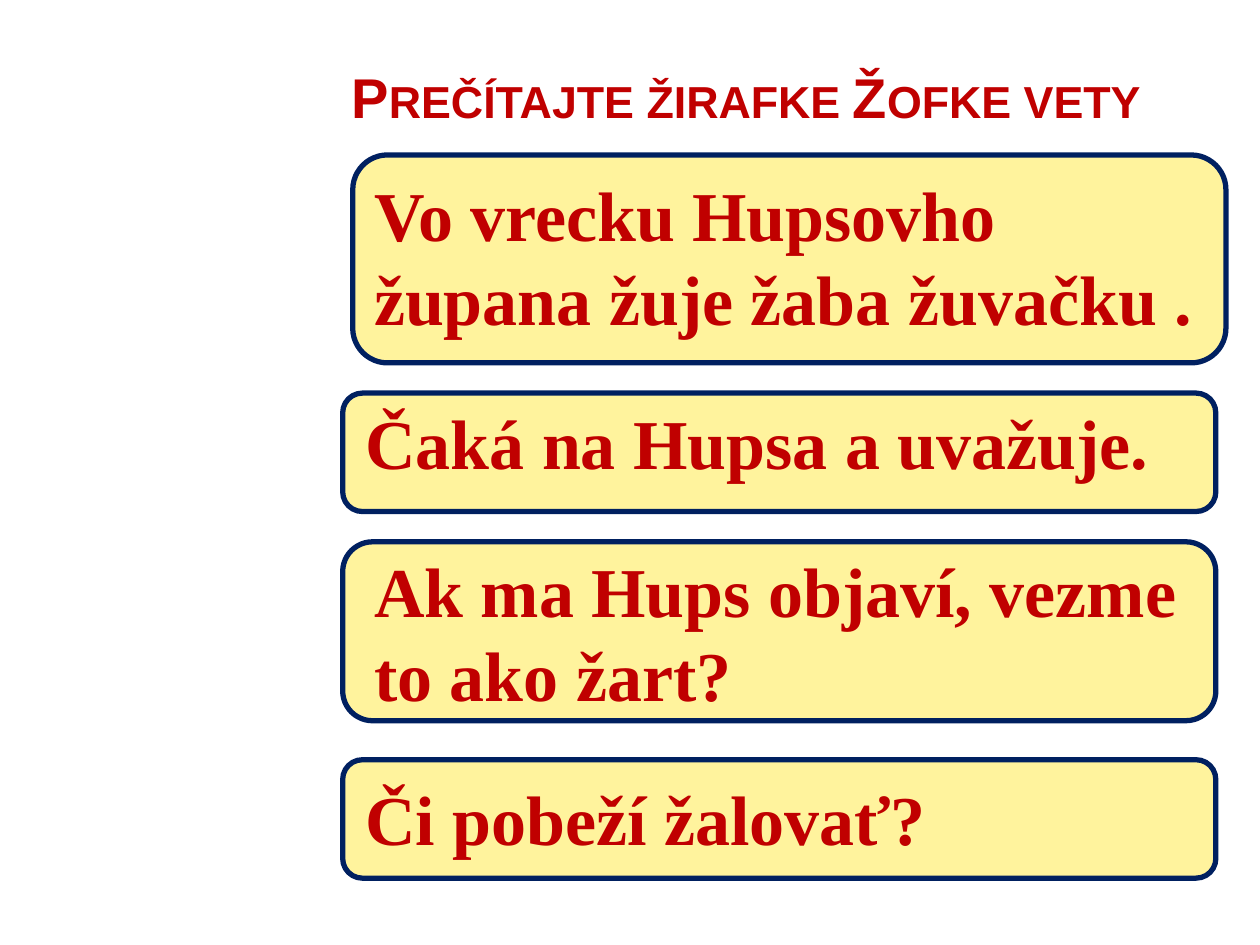
from dataclasses import dataclass

import pptx
import pptx.dml.color
import pptx.enum.shapes
import pptx.enum.text
import pptx.util
from pptx.util import Inches

RED = "C00000"
YELLOW = "FFF39D"
NAVY = "002060"
PANEL_WIDTH = 6.93
SENTENCE_WIDTH = 6.85


@dataclass
class SentenceCard:
    text: str
    panel_left: float
    panel_top: float
    panel_height: float
    text_left: float
    text_top: float
    text_height: float


CARDS = [
    SentenceCard("Vo vrecku Hupsovho župana žuje žaba žuvačku .", 2.8, 1.23, 1.65, 2.87, 1.31, 1.45),
    SentenceCard("Čaká na Hupsa a uvažuje.", 2.72, 3.12, 0.94, 2.8, 3.12, 0.77),
    SentenceCard("Ak ma Hups objaví, vezme to ako žart?", 2.72, 4.3, 1.42, 2.87, 4.3, 1.45),
    SentenceCard("Či pobeží žalovať?", 2.72, 6.03, 0.94, 2.8, 6.11, 0.77),
]


def color(value: str) -> pptx.dml.color.RGBColor:
    return pptx.dml.color.RGBColor.from_string(value)


def write_text(shape, text: str, font_name: str, size: int, line_height: int):
    frame = shape.text_frame
    frame.word_wrap = True
    frame.auto_size = pptx.enum.text.MSO_AUTO_SIZE.NONE
    frame.vertical_anchor = pptx.enum.text.MSO_ANCHOR.TOP
    paragraph = frame.paragraphs[0]
    paragraph.alignment = pptx.enum.text.PP_ALIGN.LEFT
    paragraph.line_spacing = pptx.util.Pt(line_height)
    run = paragraph.add_run()
    run.text = text
    run.font.name = font_name
    run.font.size = pptx.util.Pt(size)
    run.font.bold = True
    run.font.color.rgb = color(RED)
    return run


def draw_title(slide) -> None:
    title = slide.shapes.title
    title.left, title.top = Inches(2.72), Inches(0.44)
    title.width, title.height = Inches(7.01), Inches(1.03)
    title.text_frame.margin_left = Inches(0.07)
    run = write_text(title, "Prečítajte žirafke Žofke vety", "Arial", 32, 39)
    run.font._element.set("cap", "small")


def draw_card(slide, card: SentenceCard) -> None:
    panel = slide.shapes.add_shape(
        pptx.enum.shapes.MSO_SHAPE.ROUNDED_RECTANGLE,
        Inches(card.panel_left), Inches(card.panel_top),
        Inches(PANEL_WIDTH), Inches(card.panel_height),
    )
    panel.shadow.inherit = False
    panel.fill.solid()
    panel.fill.fore_color.rgb = color(YELLOW)
    panel.line.color.rgb = color(NAVY)
    panel.line.width = pptx.util.Pt(3)
    sentence = slide.shapes.add_textbox(
        Inches(card.text_left), Inches(card.text_top),
        Inches(SENTENCE_WIDTH), Inches(card.text_height),
    )
    write_text(sentence, card.text, "Times New Roman", 40, 48)


def main() -> None:
    presentation = pptx.Presentation()
    presentation.slide_width = Inches(10)
    presentation.slide_height = Inches(7.5)
    slide = presentation.slides.add_slide(presentation.slide_layouts[5])
    draw_title(slide)
    for card in CARDS:
        draw_card(slide, card)
    presentation.save("out.pptx")


if __name__ == "__main__":
    main()
